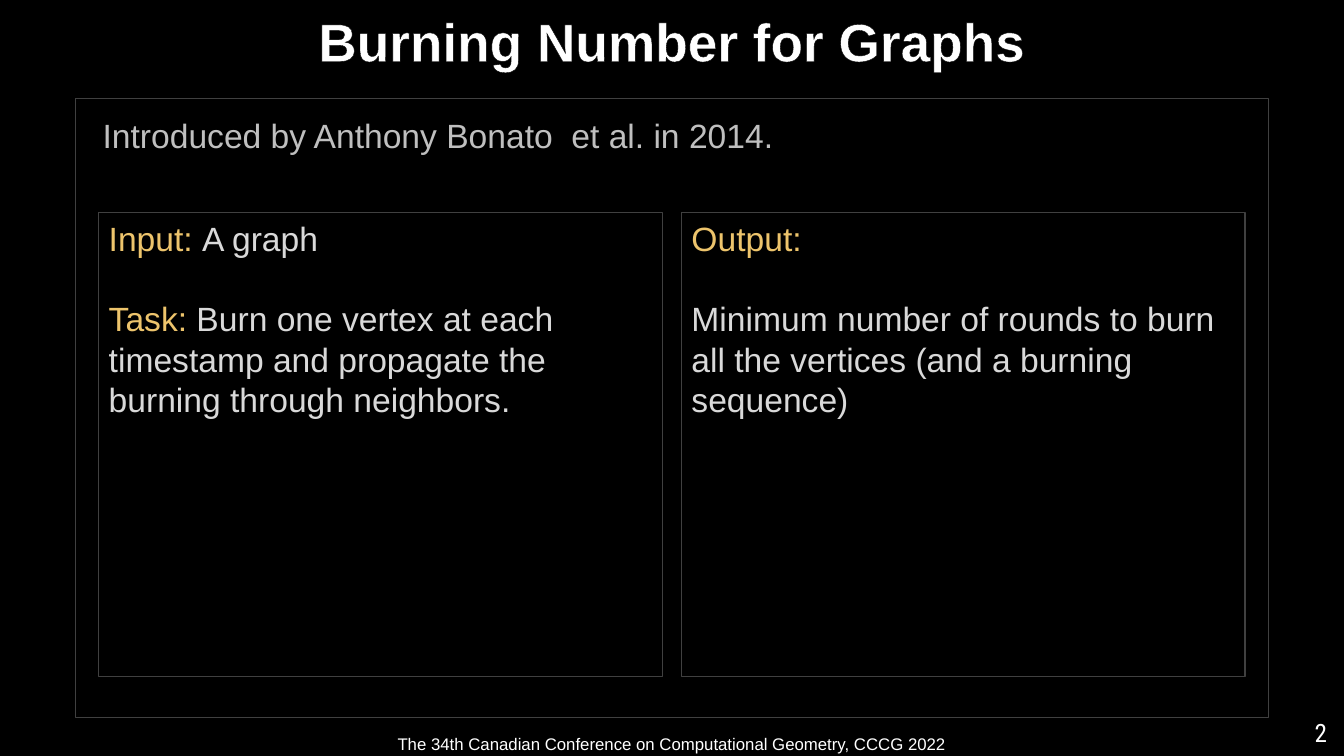
import dataclasses

import pptx
import pptx.dml.color
import pptx.enum.shapes
import pptx.enum.text
import pptx.oxml
import pptx.oxml.ns
import pptx.util
from pptx.util import Inches

ALIGN = pptx.enum.text.PP_ALIGN
ANCHOR = pptx.enum.text.MSO_ANCHOR


@dataclasses.dataclass(frozen=True)
class Theme:
    font: str = "Arial"
    number_font: str = "Roboto Condensed"
    background: str = "000000"
    bright: str = "FFFFFF"
    body: str = "D9D9D9"
    muted: str = "BFBFBF"
    accent: str = "EDC46C"
    border: str = "404040"
    title_size: int = 38
    body_size: int = 24
    number_size: int = 18
    footer_size: int = 12
    paragraph_gap: float = 28.8


THEME = Theme()


def color(value):
    return pptx.dml.color.RGBColor.from_string(value)


def add_box(slide, left, top, width, height, line, line_width=1, fill=None):
    """Rectangle with a thin border."""
    shape = slide.shapes.add_shape(
        pptx.enum.shapes.MSO_SHAPE.RECTANGLE,
        Inches(left), Inches(top), Inches(width), Inches(height))
    shape.shadow.inherit = False
    if fill:
        shape.fill.solid()
        shape.fill.fore_color.rgb = color(fill)
    else:
        shape.fill.background()
    shape.line.color.rgb = color(line)
    shape.line.width = pptx.util.Pt(line_width)
    return shape


def add_text_box(slide, left, top, width, height):
    return slide.shapes.add_textbox(
        Inches(left), Inches(top), Inches(width), Inches(height))


def write(shape, paragraphs, size, align=ALIGN.LEFT, anchor=ANCHOR.TOP,
          font=THEME.font, bold=False, spacing=None):
    """Fill a shape with paragraphs, each a list of (text, colour) runs."""
    frame = shape.text_frame
    frame.word_wrap = True
    frame.vertical_anchor = anchor
    for index, runs in enumerate(paragraphs):
        paragraph = frame.add_paragraph() if index else frame.paragraphs[0]
        paragraph.alignment = align
        paragraph.line_spacing = spacing
        if index:
            paragraph.space_before = pptx.util.Pt(THEME.paragraph_gap)
        for text, run_color in runs:
            run = paragraph.add_run()
            run.text = text
            run.font.name = font
            run.font.size = pptx.util.Pt(size)
            run.font.bold = bold
            run.font.color.rgb = color(run_color)


def outline_text(shape, line_color, width):
    """Put a thin outline around the letters of a shape."""
    for paragraph in shape.text_frame.paragraphs:
        for run in paragraph.runs:
            outline = pptx.oxml.parse_xml(
                f'<a:ln {pptx.oxml.ns.nsdecls("a")} w="{pptx.util.Pt(width)}">'
                f'<a:solidFill><a:srgbClr val="{line_color}"/></a:solidFill></a:ln>')
            run.font._element.insert(0, outline)


def main():
    presentation = pptx.Presentation()
    presentation.slide_width = Inches(13.33)
    presentation.slide_height = Inches(7.5)
    slide = presentation.slides.add_slide(presentation.slide_layouts[6])
    slide.background.fill.solid()
    slide.background.fill.fore_color.rgb = color(THEME.background)

    # Introduction
    introduction = add_text_box(slide, 0.92, 1.14, 11.5, 5.61)
    write(introduction,
          [[("Introduced by Anthony Bonato  et al. in 2014.", THEME.muted)]],
          THEME.body_size, ALIGN.JUSTIFY, spacing=0.9)

    # Title
    title = add_box(slide, 0, 0.07, 13.33, 0.84, THEME.background)
    write(title, [[("Burning Number for Graphs", THEME.bright)]],
          THEME.title_size, ALIGN.CENTER, ANCHOR.MIDDLE, bold=True, spacing=0.9)
    title.text_frame.margin_bottom = Inches(0.15)
    outline_text(title, THEME.background, 0.75)

    # Content frame
    add_box(slide, 0.75, 0.98, 11.83, 6.14, THEME.border)

    # Footer and slide number
    footer = add_box(slide, 0, 7.25, 13.33, 0.25, THEME.background, 0.5,
                     THEME.background)
    write(footer,
          [[("The 34th Canadian Conference on Computational Geometry, CCCG 2022",
             THEME.bright)]],
          THEME.footer_size, ALIGN.CENTER, ANCHOR.MIDDLE)
    number = add_text_box(slide, 10.76, 7.07, 2.5, 0.83)
    write(number, [[("2", THEME.bright)]], THEME.number_size, ALIGN.RIGHT,
          font=THEME.number_font)

    # Problem panels
    panels = [
        [[("Input: ", THEME.accent), ("A graph", THEME.body)],
         [("Task: ", THEME.accent),
          ("Burn one vertex at each timestamp and propagate the burning "
           "through neighbors.", THEME.body)]],
        [[("Output:", THEME.accent)],
         [("Minimum number of rounds to burn all the vertices "
           "(and a burning sequence)", THEME.body)]],
    ]
    panel_left, panel_step = 0.98, 5.78
    for column, paragraphs in enumerate(panels):
        panel = add_box(slide, panel_left + column * panel_step, 2.11, 5.59, 4.6,
                        THEME.border)
        write(panel, paragraphs, THEME.body_size)

    presentation.save("out.pptx")


if __name__ == "__main__":
    main()
